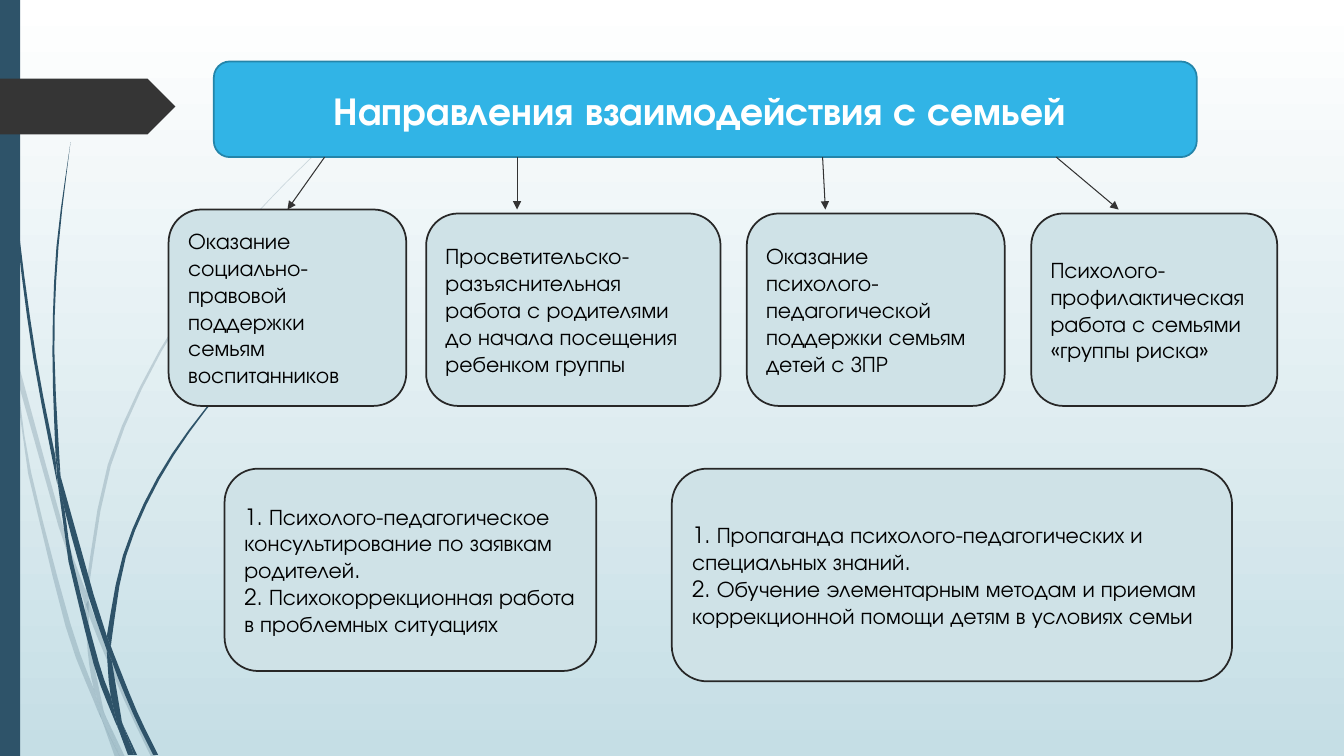
from lxml import etree
from pptx import Presentation, util as u
from pptx.dml.color import RGBColor
from pptx.enum import shapes, text
from pptx.oxml import ns

FONT = "TeX Gyre Adventor"
DARK, PALE, SKY, INK = "2E5369", "CFE2E7", "31B4E6", "272727"
INCH = u.Cm(2.54)

# Each blade is one edge followed by the other edge on the way back.
FAINT = [
    ([(.11, 3.5), (.09, 3.22), (0, 2.82)], [(0, 2.99), (.1, 3.44)]),
    ([(.58, 5.22), (.84, 5.99)],
     [(.85, 5.86), (.62, 5.2), (.14, 3.45)], [(.17, 3.76), (.58, 5.22)]),
    ([(.88, 5.96), (.88, 6.1), (1.23, 6.94), (1.5, 7.51)],
     [(1.55, 7.51), (1.27, 6.92), (.92, 6.07)]),
    ([(1.19, 7.51), (1.24, 7.51)], [(1.05, 7.11)]),
    ([(.93, 6.83), (.7, 6.19), (.31, 4.69), (.17, 3.76), (.11, 3.5)],
     [(.28, 4.7), (.65, 6.21), (.92, 6.93), (1.01, 7.14)], [(.99, 7.07)]),
    ([(.84, 5.99), (.87, 6.46), (.93, 6.83), (1.05, 7.11)],
     [(1.03, 7.06), (.91, 6.46), (.88, 6.1)]),
    ([(.88, 5.84), (1.1, 4.62), (1.6, 3.49), (2.29, 2.45), (2.68, 1.98),
      (3.12, 1.54)],
     [(3.12, 1.53), (2.68, 1.97), (2.28, 2.44), (1.58, 3.48), (1.07, 4.61),
      (.85, 5.84)], [(.85, 5.86), (.88, 5.96)]),
    ([(1.01, 7.14), (1.14, 7.51)], [(1.19, 7.51)]),
    ([(.88, 6.08), (.88, 5.96)], [(.85, 5.86), (.84, 5.99)]),
    ([(.96, 6.92), (.93, 6.83)], [(.99, 7.07), (1.01, 7.14), (1.19, 7.51)],
     [(1.05, 7.11)]),
]
BOLD = [
    ([(.03, 0), (.07, 1.1), (.17, 2.33), (.33, 3.55), (.57, 4.81)],
     [(.55, 4.53), (.36, 3.55), (.19, 2.32), (.08, 1.09), (.04, 0)]),
    ([(.6, 4.72), (.64, 5.05), (.88, 5.92), (1.06, 6.45)],
     [(1.06, 6.31), (.93, 5.9)]),
    ([(1.1, 6.41), (1.11, 6.56), (1.32, 7.08), (1.52, 7.49)],
     [(1.57, 7.49), (1.36, 7.06), (1.13, 6.49)]),
    ([(1.1, 6.91), (.98, 6.57), (.72, 5.56), (.64, 5.05), (.57, 4.77)],
     [(.68, 5.57), (.93, 6.59), (1.11, 7.08), (1.17, 7.22)], [(1.16, 7.17)]),
    ([(.6, 4.72), (.54, 3.49), (.58, 2.45), (.7, 1.41)],
     [(.7, 1.41), (.56, 2.45), (.52, 3.49), (.55, 4.49)]),
    ([(1.33, 7.49), (1.36, 7.49)], [(1.22, 7.19)]),
    ([(.57, 4.77), (.64, 5.05)], [(.6, 4.72), (.55, 4.49)]),
    ([(1.11, 6.33), (1.25, 5.52), (1.58, 4.76), (2.05, 4.06), (2.61, 3.44)],
     [(2.6, 3.44), (2.04, 4.05), (1.56, 4.74), (1.22, 5.51), (1.06, 6.31)],
     [(1.1, 6.41)]),
    ([(1.17, 7.22), (1.27, 7.49)], [(1.31, 7.49)]),
    ([(1.06, 6.45), (1.1, 6.91), (1.22, 7.19)],
     [(1.21, 7.16), (1.11, 6.56)]),
    ([(1.06, 6.45), (1.11, 6.56)], [(1.1, 6.41), (1.06, 6.31)]),
    ([(1.16, 7.06), (1.1, 6.91)], [(1.17, 7.22), (1.3, 7.49)],
     [(1.33, 7.49), (1.22, 7.19)]),
]
TASKS = [
    (4.25, 5.28, 5.99, 4.95,
     ["Оказание социально-правовой поддержки семьям воспитанников"]),
    (10.74, 5.38, 7.42, 4.85,
     ["Просветительско-разъяснительная работа с родителями до начала "
      "посещения ребенком группы"]),
    (18.82, 5.38, 6.5, 4.85,
     ["Оказание психолого-педагогической поддержки семьям детей с ЗПР"]),
    (25.99, 5.38, 6.2, 4.85,
     ["Психолого-профилактическая работа с семьями «группы риска»"]),
    (5.66, 11.81, 9.37, 5.1,
     ["1. Психолого-педагогическое консультирование по заявкам родителей.",
      "2. Психокоррекционная работа в проблемных ситуациях"]),
    (16.93, 11.81, 14.12, 5.36,
     ["1. Пропаганда психолого-педагогических и специальных знаний.",
      "2. Обучение элементарным методам и приемам коррекционной помощи "
      "детям в условиях семьи"]),
]
ARROWS = [(8.18, 7.24), (13.03, 13.03), (20.73, 20.8), (26.62, 28.19)]


def paint(form, tint):
    form.rgb = RGBColor.from_string(tint)


def write(shape, lines, size=16, tint="000000", bold=False,
          align=text.PP_ALIGN.LEFT):
    frame = shape.text_frame
    frame.word_wrap = True
    frame.auto_size = text.MSO_AUTO_SIZE.NONE
    frame.vertical_anchor = text.MSO_ANCHOR.MIDDLE
    frame.text = "\n".join(lines)
    for para in frame.paragraphs:
        para.alignment = align
        font = para.runs[0].font
        font.name, font.size, font.bold = FONT, u.Pt(size), bold
        paint(font.color, tint)


def smooth(knots, steps=3):
    ends = [knots[0], *knots, knots[-1]]
    for a, b, c, d in zip(ends, ends[1:], ends[2:], ends[3:]):
        for step in range(steps):
            t = step / steps
            yield tuple(
                q + t * (r - p) / 2 + t * t * (2 * p - 5 * q + 4 * r - s) / 2
                + t ** 3 * (3 * q - p - 3 * r + s) / 2
                for p, q, r, s in zip(a, b, c, d))
    yield knots[-1]


class Board:
    """Draws styled elements on one slide."""

    def __init__(self, deck):
        self.slide = deck.slides.add_slide(deck.slide_layouts[5])
        self.forms = self.slide.shapes

    def back(self, *tints):
        fill = self.slide.background.fill
        fill.gradient()
        fill.gradient_angle = 270
        for stop, tint in zip(fill.gradient_stops, tints):
            paint(stop.color, tint)

    def style(self, shape, fill, line=None):
        shape.shadow.inherit = False
        shape.fill.solid()
        paint(shape.fill.fore_color, fill)
        if line:
            paint(shape.line.color, line)
            shape.line.width = u.Pt(1.25)
        else:
            shape.line.fill.background()
        return shape

    def box(self, kind, place, fill, line=None):
        return self.style(
            self.forms.add_shape(kind, *map(u.Cm, place)), fill, line)

    def blade(self, edges, alpha=None):
        dots = [(x * INCH, y * INCH) for edge in edges
                for x, y in smooth(edge)]
        pen = self.forms.build_freeform(*dots[0])
        pen.add_line_segments(dots[1:], close=True)
        shape = self.style(pen.convert_to_shape(), DARK)
        if alpha:
            tone = next(shape.fill._xPr.iter(ns.qn("a:srgbClr")))
            etree.SubElement(tone, ns.qn("a:alpha"), val=str(alpha * 1000))

    def title(self, words, place):
        head = self.forms.title
        head.left, head.top, head.width, head.height = map(u.Cm, place)
        write(head, [words], size=28, tint="FFFFFF", bold=True,
              align=text.PP_ALIGN.CENTER)
        self.forms._spTree.append(head._element)

    def arrow(self, start, end, goal=None):
        link = self.forms.add_connector(
            shapes.MSO_CONNECTOR.STRAIGHT, *map(u.Cm, start + end))
        if goal:
            link.end_connect(goal, 0)
        paint(link.line.color, "333333")
        link.line.width = u.Pt(0.75)
        etree.SubElement(link.line._get_or_add_ln(), ns.qn("a:tailEnd"),
                         type="triangle")
        etree.SubElement(link._element.spPr, ns.qn("a:effectLst"))


def main():
    deck = Presentation()
    deck.slide_width, deck.slide_height = u.Cm(33.87), u.Cm(19.05)
    kinds = shapes.MSO_SHAPE
    board = Board(deck)
    board.back("FFFFFF", "C5DEE5")
    for edges in FAINT:
        board.blade(edges, alpha=20)
    for edges in BOLD:
        board.blade(edges)
    board.box(kinds.RECTANGLE, (0, 0, 0.51, 19.05), DARK)
    board.box(kinds.PENTAGON, (0, 1.98, 4.42, 1.41), "353535")
    place = (5.39, 1.55, 24.77, 2.41)
    board.box(kinds.ROUNDED_RECTANGLE, place, SKY, "2485AA")
    board.title("Направления взаимодействия с семьей ", place)
    cards = []
    for *spot, lines in TASKS:
        card = board.box(kinds.ROUNDED_RECTANGLE, spot, PALE, INK)
        write(card, lines)
        cards.append(card)
    for i, (x, end) in enumerate(ARROWS):
        board.arrow((x, 3.96), (end, 5.28), cards[0] if i == 0 else None)
    deck.save("out.pptx")


if __name__ == "__main__":
    main()
